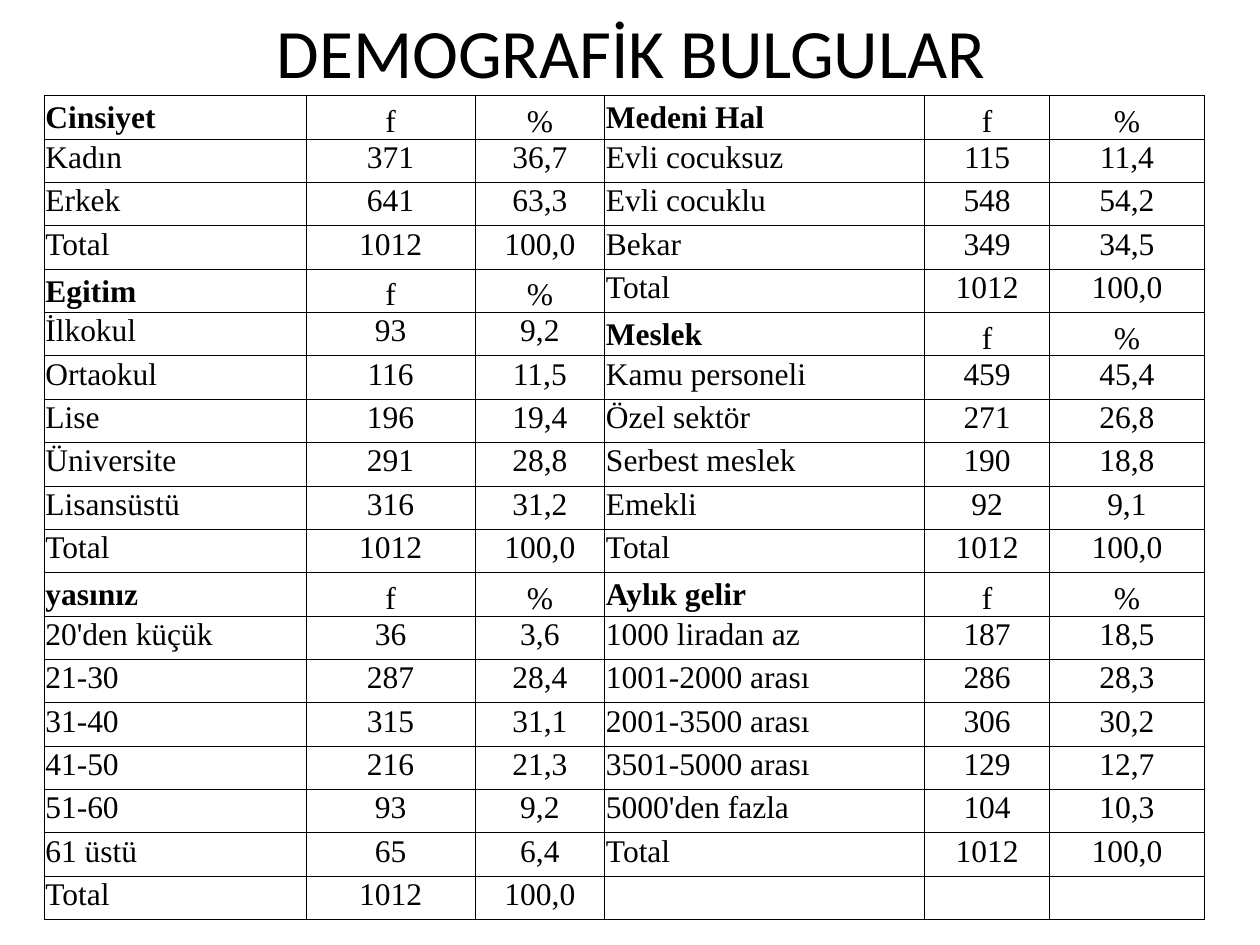
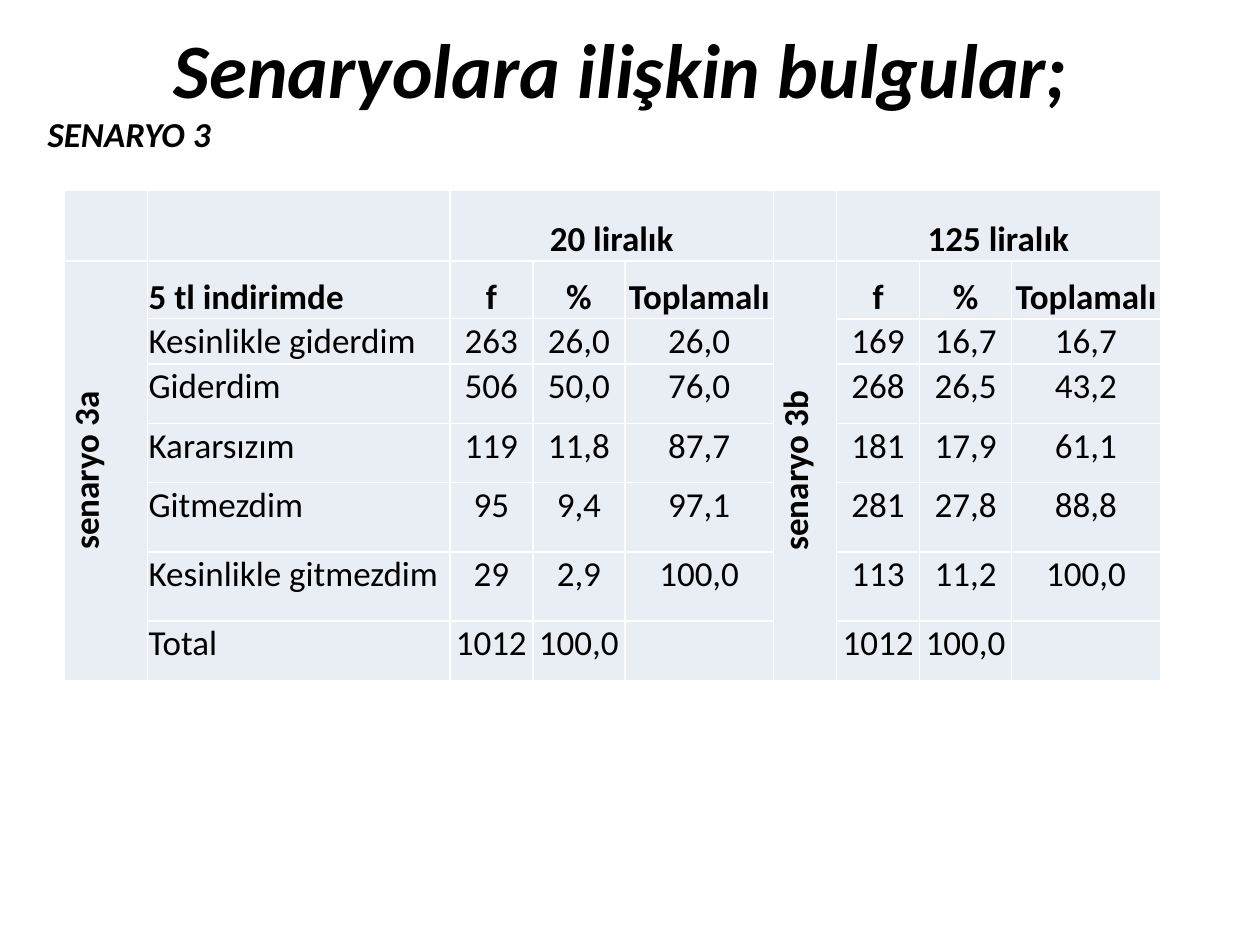
from itertools import zip_longest

from lxml.etree import SubElement
from pptx import Presentation
from pptx.dml.color import RGBColor
from pptx.enum.text import MSO_ANCHOR, PP_ALIGN
from pptx.oxml.ns import qn
from pptx.util import Inches, Pt

COLORS = {"text": "000000", "grid": "000000", "gap": "FFFFFF", "band": "E9EDF4"}
LEFT, CENTER = PP_ALIGN.LEFT, PP_ALIGN.CENTER
TOP, MIDDLE, BOTTOM = MSO_ANCHOR.TOP, MSO_ANCHOR.MIDDLE, MSO_ANCHOR.BOTTOM


def write_text(holder, text, size=20, font="Calibri", bold=False, italic=False,
               align=CENTER, anchor=TOP):
    """Write one formatted paragraph into a text frame or a table cell."""
    holder.vertical_anchor = anchor
    paragraph = getattr(holder, "text_frame", holder).paragraphs[0]
    paragraph.alignment = align
    run = paragraph.add_run()
    run.text = text
    run.font.size = Pt(size)
    run.font.name = font
    run.font.bold = bold
    run.font.italic = italic
    run.font.color.rgb = RGBColor.from_string(COLORS["text"])


def add_grid(slide, left, top, widths, heights, line, line_width, fill=None):
    """Add an empty table with tight margins, even borders and one fill."""
    frame = slide.shapes.add_table(
        len(heights), len(widths), Inches(left), Inches(top),
        Inches(sum(widths)), Inches(sum(heights)))
    table = frame.table
    table.first_row = table.horz_banding = False
    for column, width in zip(table.columns, widths):
        column.width = Inches(width)
    for row, height in zip(table.rows, heights):
        row.height = Inches(height)
    for cell in table.iter_cells():
        cell.margin_left = cell.margin_right = cell.margin_top = Inches(0.01)
        cell.margin_bottom = 0
        properties = cell._tc.get_or_add_tcPr()
        for side in ("a:lnL", "a:lnR", "a:lnT", "a:lnB"):
            border = SubElement(properties, qn(side), w=str(Pt(line_width)))
            solid = SubElement(border, qn("a:solidFill"))
            SubElement(solid, qn("a:srgbClr"), val=COLORS[line])
        if fill:
            cell.fill.solid()
            cell.fill.fore_color.rgb = RGBColor.from_string(COLORS[fill])
        else:
            cell.fill.background()
    return table


presentation = Presentation()
presentation.slide_width = Inches(10)
presentation.slide_height = Inches(7.5)

# Slides and their titles
slides = []
for text, box, style in (
    ("DEMOGRAFİK BULGULAR", (0.51, 0.05, 9, 0.71), {"size": 39.6}),
    ("Senaryolara ilişkin bulgular;", (0.43, 0.07, 9, 0.93),
     {"size": 44, "bold": True, "italic": True}),
):
    slide = presentation.slides.add_slide(presentation.slide_layouts[5])
    title = slide.shapes.title
    title.left, title.top, title.width, title.height = map(Inches, box)
    write_text(title.text_frame, text, anchor=MIDDLE, **style)
    slides.append(slide)
demographics_slide, scenario_slide = slides

# Slide 1: demographic groups, stacked in two halves
left_half = [
    ("Cinsiyet", "f", "%"),
    ("Kadın", "371", "36,7"),
    ("Erkek", "641", "63,3"),
    ("Total", "1012", "100,0"),
    ("Egitim", "f", "%"),
    ("İlkokul", "93", "9,2"),
    ("Ortaokul", "116", "11,5"),
    ("Lise", "196", "19,4"),
    ("Üniversite", "291", "28,8"),
    ("Lisansüstü", "316", "31,2"),
    ("Total", "1012", "100,0"),
    ("yasınız", "f", "%"),
    ("20'den küçük", "36", "3,6"),
    ("21-30", "287", "28,4"),
    ("31-40", "315", "31,1"),
    ("41-50", "216", "21,3"),
    ("51-60", "93", "9,2"),
    ("61 üstü", "65", "6,4"),
    ("Total", "1012", "100,0"),
]
right_half = [
    ("Medeni Hal", "f", "%"),
    ("Evli cocuksuz", "115", "11,4"),
    ("Evli cocuklu", "548", "54,2"),
    ("Bekar", "349", "34,5"),
    ("Total", "1012", "100,0"),
    ("Meslek", "f", "%"),
    ("Kamu personeli", "459", "45,4"),
    ("Özel sektör", "271", "26,8"),
    ("Serbest meslek", "190", "18,8"),
    ("Emekli", "92", "9,1"),
    ("Total", "1012", "100,0"),
    ("Aylık gelir", "f", "%"),
    ("1000 liradan az", "187", "18,5"),
    ("1001-2000 arası", "286", "28,3"),
    ("2001-3500 arası", "306", "30,2"),
    ("3501-5000 arası", "129", "12,7"),
    ("5000'den fazla", "104", "10,3"),
    ("Total", "1012", "100,0"),
]
row_count = len(left_half)
demographics = add_grid(demographics_slide, 0.35, 0.76,
                        [2.08, 1.34, 1.03, 2.54, 0.99, 1.23],
                        [6.54 / row_count] * row_count, "grid", 0.5)
for row, halves in enumerate(zip_longest(left_half, right_half, fillvalue=())):
    for half, entries in enumerate(halves):
        is_header = "f" in entries
        for offset, text in enumerate(entries):
            is_label = offset == 0
            header_anchor = MIDDLE if is_label else BOTTOM
            write_text(demographics.cell(row, half * 3 + offset), text, size=18,
                       font="Times New Roman", bold=is_header and is_label,
                       align=LEFT if is_label else CENTER,
                       anchor=header_anchor if is_header else TOP)

# Slide 2: scenario caption
caption = scenario_slide.shapes.add_textbox(
    Inches(0.28), Inches(0.84), Inches(3.23), Inches(0.44))
caption.text_frame.word_wrap = True
write_text(caption.text_frame, "SENARYO 3", bold=True, italic=True, align=LEFT)

# Slide 2: answers to both scenarios
answers = ["Kesinlikle giderdim", "Giderdim", "Kararsızım", "Gitmezdim",
           "Kesinlikle gitmezdim", "Total"]
scenarios = [
    {"name": "senaryo 3a", "price": "20 liralık", "name_column": 0, "column": 2,
     "first_row": 2,
     "values": [("263", "26,0", "26,0"), ("506", "50,0", "76,0"),
                ("119", "11,8", "87,7"), ("95", "9,4", "97,1"),
                ("29", "2,9", "100,0"), ("1012", "100,0")]},
    {"name": "senaryo 3b", "price": "125 liralık", "name_column": 5, "column": 6,
     "first_row": 3,
     "values": [("169", "16,7", "16,7"), ("268", "26,5", "43,2"),
                ("181", "17,9", "61,1"), ("281", "27,8", "88,8"),
                ("113", "11,2", "100,0"), ("1012", "100,0")]},
]
results = add_grid(scenario_slide, 0.51, 1.51,
                   [0.66, 2.4, 0.66, 0.73, 1.18, 0.5, 0.66, 0.73, 1.18],
                   [0.56, 0.46, 0, 0.36, 0.47, 0.47, 0.55, 0.55, 0.47],
                   "gap", 1, "band")

# The zero-height row belongs to the first answer on the left, the header on the right
for column in range(1, 5):
    results.cell(2, column).merge(results.cell(3, column))
for column in range(6, 9):
    results.cell(1, column).merge(results.cell(2, column))

write_text(results.cell(1, 1), "5 tl indirimde", bold=True, align=LEFT, anchor=BOTTOM)
for row, answer in zip([2, 4, 5, 6, 7, 8], answers):
    write_text(results.cell(row, 1), answer, align=LEFT)

for scenario in scenarios:
    column = scenario["column"]
    price_cell = results.cell(0, column)
    price_cell.merge(results.cell(0, column + 2))
    write_text(price_cell, scenario["price"], bold=True, anchor=BOTTOM)

    name_cell = results.cell(1, scenario["name_column"])
    name_cell.merge(results.cell(8, scenario["name_column"]))
    name_cell._tc.get_or_add_tcPr().set("vert", "vert270")
    write_text(name_cell, scenario["name"], bold=True, anchor=MIDDLE)

    for offset, heading in enumerate(("f", "%", "Toplamalı")):
        write_text(results.cell(1, column + offset), heading, bold=True, anchor=BOTTOM)
    for row, values in zip([scenario["first_row"], 4, 5, 6, 7, 8], scenario["values"]):
        for offset, value in enumerate(values):
            write_text(results.cell(row, column + offset), value)

presentation.save("out.pptx")
